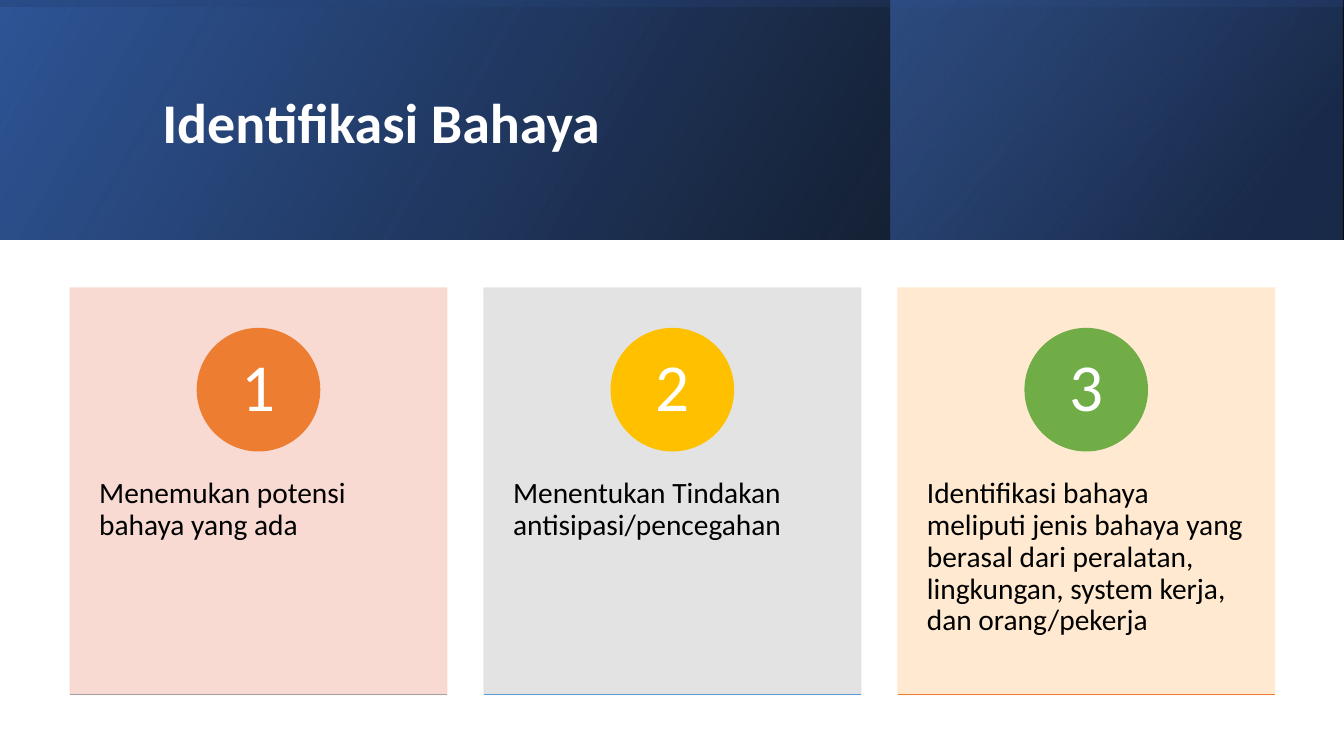
from dataclasses import dataclass

from lxml.etree import SubElement
from pptx import Presentation
from pptx.dml.color import RGBColor
from pptx.enum.shapes import MSO_CONNECTOR, MSO_SHAPE
from pptx.enum.text import MSO_ANCHOR, MSO_AUTO_SIZE, PP_ALIGN
from pptx.oxml.ns import qn
from pptx.util import Cm, Pt


@dataclass(frozen=True)
class Theme:
    font: str = "Calibri"
    title_size: int = 40
    number_size: int = 48
    body_size: int = 21
    white: str = "FFFFFF"
    black: str = "000000"
    navy: str = "203864"
    blue: str = "2F5597"
    light_blue: str = "4472C4"
    # One (card, circle, base line) set for each column
    columns: tuple = (
        ("F8D7CE", "ED7D31", "A5A5A5"),
        ("E1E1E1", "FFC000", "5B9BD5"),
        ("FFE8CC", "70AD47", "ED7D31"),
    )


THEME = Theme()
SLIDE_WIDTH, SLIDE_HEIGHT = 33.87, 19.05
BAND_HEIGHT = 6.03
CARD_LEFT, CARD_TOP, CARD_WIDTH, CARD_HEIGHT = 1.77, 7.26, 9.49, 10.24
CARD_STEP = 10.43
CIRCLE_SIZE = 3.08
STEPS = (
    "Menemukan potensi bahaya yang ada",
    "Menentukan Tindakan antisipasi/pencegahan",
    "Identifikasi bahaya meliputi jenis bahaya yang berasal dari peralatan, "
    "lingkungan, system kerja, dan orang/pekerja",
)


def set_alpha(color_element, percent):
    SubElement(color_element, qn("a:alpha")).set("val", str(percent * 1000))


def add_gradient_band(slide, left, top, width, height, angle, stops, rotation=0):
    """Add a mirrored rectangle; each stop is (position, colour, opacity)."""
    band = slide.shapes.add_shape(
        MSO_SHAPE.RECTANGLE, Cm(left), Cm(top), Cm(width), Cm(height))
    band.shadow.inherit = False
    band.line.fill.background()
    band.rotation = rotation
    band.element.spPr.find(qn("a:xfrm")).set("flipH", "1")
    band.fill.gradient()
    band.fill.gradient_angle = 360 - angle
    for stop, (position, color, opacity) in zip(band.fill.gradient_stops, stops):
        stop.position = position / 100
        stop.color.rgb = RGBColor.from_string(color)
    colors = band.element.spPr.iter(qn("a:srgbClr"))
    for color_element, (_, _, opacity) in zip(colors, stops):
        set_alpha(color_element, opacity)


def add_solid_shape(slide, kind, left, top, width, height, color, opacity=100):
    shape = slide.shapes.add_shape(kind, Cm(left), Cm(top), Cm(width), Cm(height))
    shape.shadow.inherit = False
    shape.fill.solid()
    shape.fill.fore_color.rgb = RGBColor.from_string(color)
    shape.line.color.rgb = RGBColor.from_string(color)
    shape.line.width = Pt(1)
    if opacity < 100:
        for color_element in shape.element.spPr.iter(qn("a:srgbClr")):
            set_alpha(color_element, opacity)
    return shape


def add_base_line(slide, left, top, width, color):
    line = slide.shapes.add_connector(
        MSO_CONNECTOR.STRAIGHT, Cm(left), Cm(top), Cm(left + width), Cm(top))
    line.line.color.rgb = RGBColor.from_string(color)
    line.line.width = Pt(1)
    SubElement(line.element.spPr, qn("a:effectLst"))


def write_text(shape, text, size, color, alignment=PP_ALIGN.LEFT,
               anchor=MSO_ANCHOR.TOP, bold=False, insets=(0.25, 0.13)):
    frame = shape.text_frame
    frame.word_wrap = True
    frame.auto_size = MSO_AUTO_SIZE.NONE
    frame.vertical_anchor = anchor
    frame.margin_left = frame.margin_right = Cm(insets[0])
    frame.margin_top = frame.margin_bottom = Cm(insets[1])
    paragraph = frame.paragraphs[0]
    paragraph.alignment = alignment
    paragraph.line_spacing = 0.9
    run = paragraph.add_run()
    run.text = text
    run.font.name = THEME.font
    run.font.size = Pt(size)
    run.font.bold = bold
    run.font.color.rgb = RGBColor.from_string(color)


def add_header(slide):
    # Three translucent gradients, the last one turned on its side
    add_gradient_band(slide, 0, 0, SLIDE_WIDTH, BAND_HEIGHT, 330,
                      ((0, THEME.black, 96), (100, THEME.blue, 100)))
    add_gradient_band(slide, 22.44, 0, 11.39, BAND_HEIGHT, 320,
                      ((19, THEME.navy, 68), (100, THEME.light_blue, 48)))
    add_gradient_band(slide, 13.92, -13.92, BAND_HEIGHT, SLIDE_WIDTH, 350,
                      ((23, THEME.blue, 16), (99, THEME.black, 45)), rotation=270)


def add_title(slide, text):
    title = slide.shapes.title
    title.left, title.top = Cm(3.84), Cm(0.97)
    title.width, title.height = Cm(27), Cm(4.37)
    write_text(title, text, THEME.title_size, THEME.white,
               anchor=MSO_ANCHOR.MIDDLE, bold=True)
    # Bring the title in front of the header bands
    slide.shapes.element.append(title.element)


def add_card(slide, index, text):
    card_color, circle_color, line_color = THEME.columns[index]
    left = CARD_LEFT + index * CARD_STEP
    add_solid_shape(slide, MSO_SHAPE.RECTANGLE, left, CARD_TOP,
                    CARD_WIDTH, CARD_HEIGHT, card_color, opacity=90)

    # Description
    body = slide.shapes.add_textbox(
        Cm(left), Cm(11.15), Cm(CARD_WIDTH), Cm(6.15))
    write_text(body, text, THEME.body_size, THEME.black, insets=(0.73, 0.91))

    # Numbered circle
    circle = add_solid_shape(
        slide, MSO_SHAPE.OVAL, left + (CARD_WIDTH - CIRCLE_SIZE) / 2, 8.28,
        CIRCLE_SIZE, CIRCLE_SIZE, circle_color)
    write_text(circle, str(index + 1), THEME.number_size, THEME.white,
               PP_ALIGN.CENTER, MSO_ANCHOR.MIDDLE, insets=(0.23, 0.03))

    add_base_line(slide, left, CARD_TOP + CARD_HEIGHT, CARD_WIDTH, line_color)


def main():
    presentation = Presentation()
    presentation.slide_width = Cm(SLIDE_WIDTH)
    presentation.slide_height = Cm(SLIDE_HEIGHT)
    slide = presentation.slides.add_slide(presentation.slide_layouts[5])
    add_header(slide)
    add_title(slide, "Identifikasi Bahaya")
    for index, text in enumerate(STEPS):
        add_card(slide, index, text)
    presentation.save("out.pptx")


if __name__ == "__main__":
    main()
